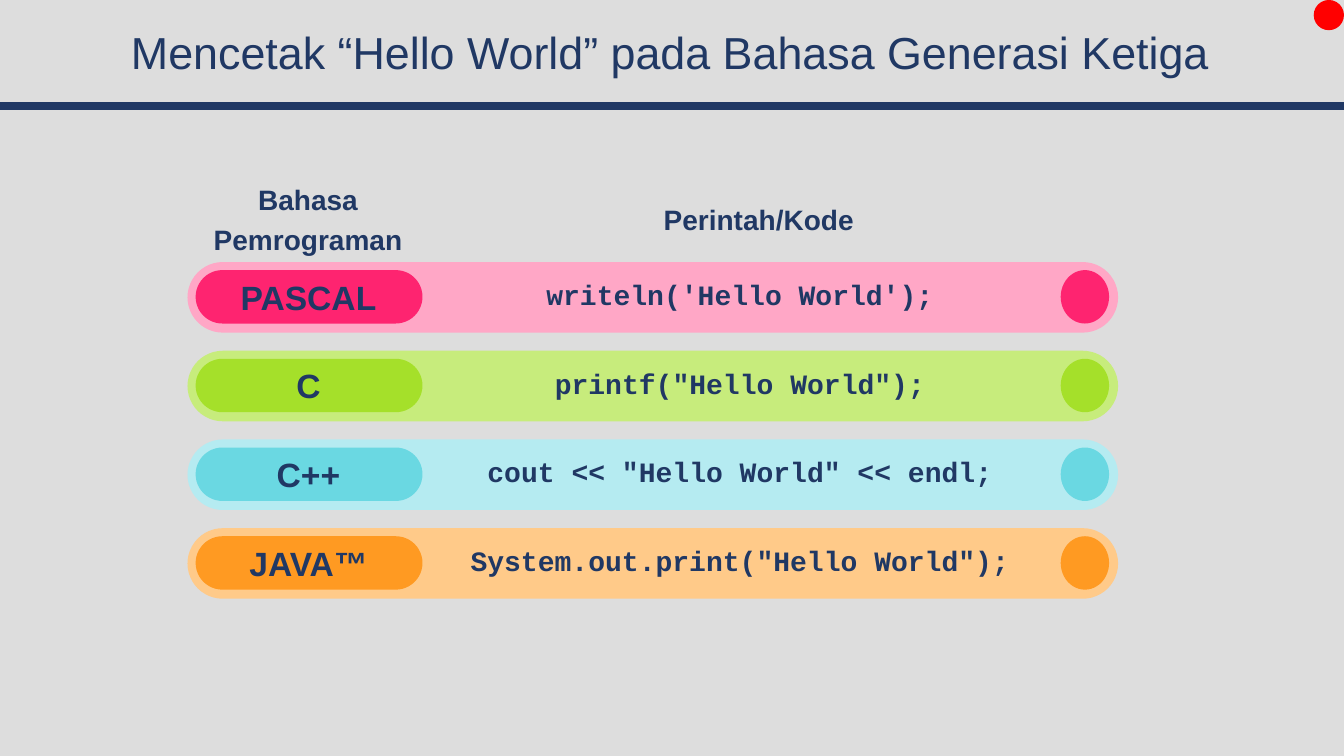
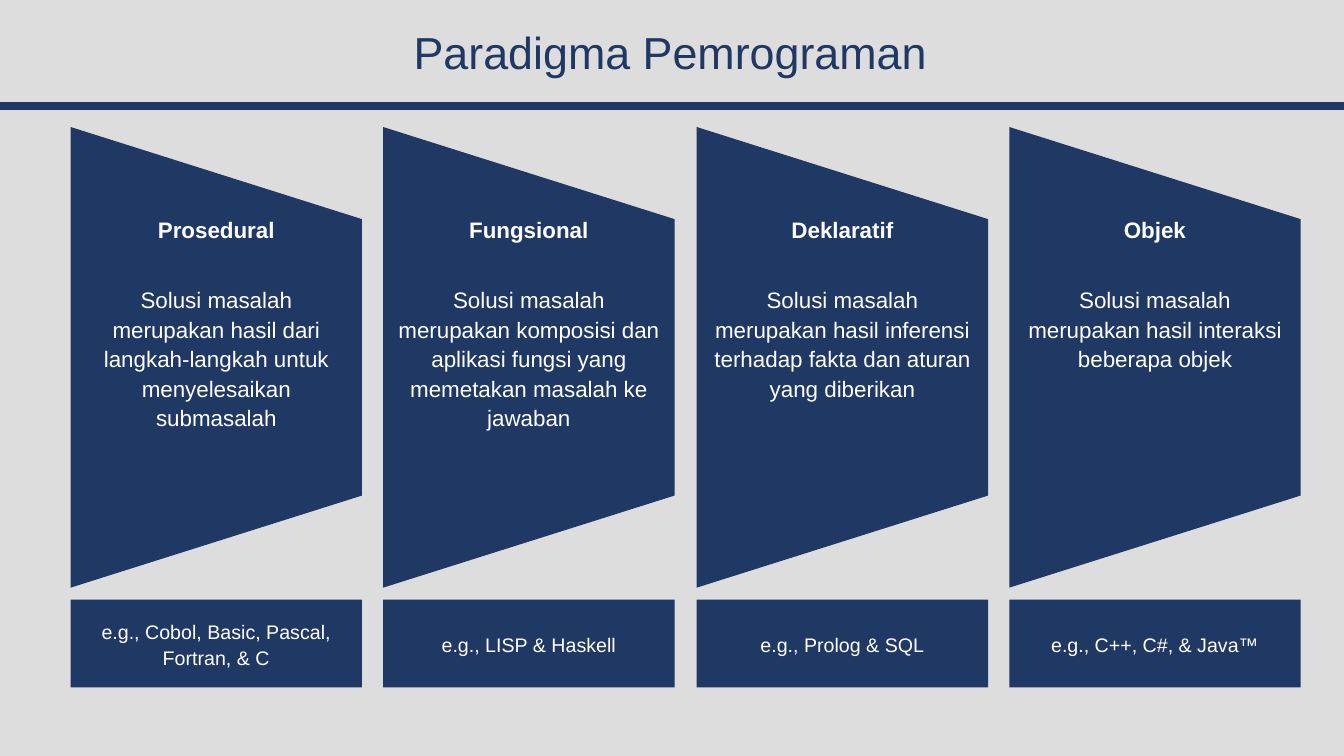
from lxml import etree
from pptx import Presentation, util as u
from pptx.dml.color import RGBColor
from pptx.enum import shapes, text
from pptx.oxml import ns

PX = 9144  # 100 px to the inch


class Theme:
    navy, paper, white, red = "203864", "DDDDDD", "FFFFFF", "FF0000"
    sans, mono = "Arial", "Courier New"
    title, label, header, body, note = 32, 24, 20, 16, 14


def write(sp, paras, anchor=text.MSO_ANCHOR.TOP, **frame):
    """Fill a shape with (text, run font, paragraph format) entries."""
    tf = sp.text_frame
    for name, value in dict(word_wrap=True, auto_size=text.MSO_AUTO_SIZE.NONE,
                            vertical_anchor=anchor, **frame).items():
        setattr(tf, name, value)
    for i, (words, font, layout) in enumerate(paras):
        p = tf.add_paragraph() if i else tf.paragraphs[0]
        for name, value in dict(alignment=text.PP_ALIGN.CENTER, **layout).items():
            setattr(p, name, value)
        r = p.add_run()
        r.text = words
        r.font.color.rgb = RGBColor.from_string(font.get("color", Theme.navy))
        r.font.size = u.Pt(font["size"])
        r.font.name = font.get("name", Theme.sans)
        r.font.bold = font.get("bold", False)


def shape(s, kind, box, color):
    """Add a flat preset shape; box is left, top, width, height in px."""
    sp = s.shapes.add_shape(kind, *[v * PX for v in box])
    sp.fill.solid()
    sp.fill.fore_color.rgb = RGBColor.from_string(color)
    sp.line.fill.background()
    sp.shadow.inherit = False
    return sp


KIND = shapes.MSO_SHAPE
MIDDLE = text.MSO_ANCHOR.MIDDLE

prs = Presentation()
prs.slide_width, prs.slide_height = 1333 * PX, 750 * PX

# Shared look: background and title place on the title-only layout
layout = prs.slide_layouts[5]
layout.background.fill.solid()
layout.background.fill.fore_color.rgb = RGBColor.from_string(Theme.paper)
for name, value in dict(left=40, top=20, width=1250, height=70).items():
    setattr(layout.placeholders[0], name, value * PX)

# Both slides with their titles
slides = []
for heading in ("Mencetak “Hello World” pada Bahasa Generasi Ketiga",
                "Paradigma Pemrograman"):
    s = prs.slides.add_slide(layout)
    write(s.shapes.title, [(heading, dict(size=Theme.title), dict(line_spacing=0.9))], MIDDLE)
    slides.append(s)
hello, paradigms = slides

# Rule under the title, moved to the layout so every slide shows it
rule = hello.shapes.add_connector(shapes.MSO_CONNECTOR.STRAIGHT, 0, 105 * PX, 1333 * PX, 105 * PX)
rule.line.width = u.Pt(6)
rule.line.color.rgb = RGBColor.from_string(Theme.navy)
etree.SubElement(rule.element.spPr, ns.qn("a:effectLst"))
layout.shapes.element.append(rule.element)

# Slide 1: one coloured bar per language
languages = [
    ("PASCAL", "writeln('Hello World');", "FE2470", "FFA7C6"),
    ("C", 'printf("Hello World");', "A5E02A", "C7EC7C"),
    ("C++", 'cout << "Hello World" << endl;', "6AD8E2", "B5EBF1"),
    ("JAVA™", 'System.out.print("Hello World");', "FF9A22", "FFCA89"),
]
for i, (language, code, strong, pale) in enumerate(languages):
    y = 260 + 88 * i
    for kind, box, color in [
        (KIND.ROUNDED_RECTANGLE, (186, y, 923, 70), pale),
        (KIND.OVAL, (1052, y + 8, 48, 53), strong),
        (KIND.ROUNDED_RECTANGLE, (194, y + 8, 225, 53), strong),
    ]:
        sp = shape(hello, kind, box, color)
        if kind == KIND.ROUNDED_RECTANGLE:
            sp.adjustments[0] = 0.5
    for x, width, words, font in [
        (203, 206, language, dict(size=Theme.label, bold=True)),
        (426, 616, code, dict(size=Theme.header, bold=True, name=Theme.mono)),
    ]:
        sp = hello.shapes.add_textbox(x * PX, (y + 14) * PX, width * PX, 41 * PX)
        write(sp, [(words, font, dict(line_spacing=0.9, space_before=u.Pt(10)))])

# Slide 1: column headers and corner dot
for x, header, anchor in [(195, "Bahasa Pemrograman", text.MSO_ANCHOR.TOP),
                          (642, "Perintah/Kode", MIDDLE)]:
    sp = hello.shapes.add_textbox(x * PX, 169 * PX, 221 * PX, 91 * PX)
    write(sp, [(header, dict(size=Theme.header, bold=True), dict(line_spacing=1.2))], anchor)
shape(hello, KIND.OVAL, (1303, 0, 30, 30), Theme.red)

# Slide 2: one trapezoid and example box per paradigm
columns = [
    ("Prosedural", "Solusi masalah merupakan hasil dari langkah-langkah untuk "
     "menyelesaikan submasalah", "e.g., Cobol, Basic, Pascal, Fortran, & C"),
    ("Fungsional", "Solusi masalah merupakan komposisi dan aplikasi fungsi yang "
     "memetakan masalah ke jawaban", "e.g., LISP & Haskell"),
    ("Deklaratif", "Solusi masalah merupakan hasil inferensi terhadap fakta dan "
     "aturan yang diberikan", "e.g., Prolog & SQL"),
    ("Objek", "Solusi masalah merupakan hasil interaksi beberapa objek",
     "e.g., C++, C#, & Java™"),
]
body = dict(size=Theme.body, color=Theme.white)
note = dict(size=Theme.note, color=Theme.white)
for i, (paradigm, solution, examples) in enumerate(columns):
    x = 70 + 621 * i // 2
    sp = shape(paradigms, KIND.FLOWCHART_MANUAL_OPERATION, (x - 84, 210, 457, 289), Theme.navy)
    sp.rotation = 270
    sp = paradigms.shapes.add_textbox(x * PX, 217 * PX, 289 * PX, 274 * PX)
    write(sp, [
        (paradigm, dict(body, bold=True), dict(line_spacing=0.9, space_after=u.Pt(29))),
        (solution, body, dict(line_spacing=1.1)),
    ], margin_left=11 * PX, margin_right=11 * PX, margin_top=0, margin_bottom=0)
    sp = shape(paradigms, KIND.RECTANGLE, (x, 595, 289, 87), Theme.navy)
    write(sp, [(examples, note, dict(line_spacing=1.1))], MIDDLE)

prs.save("out.pptx")
